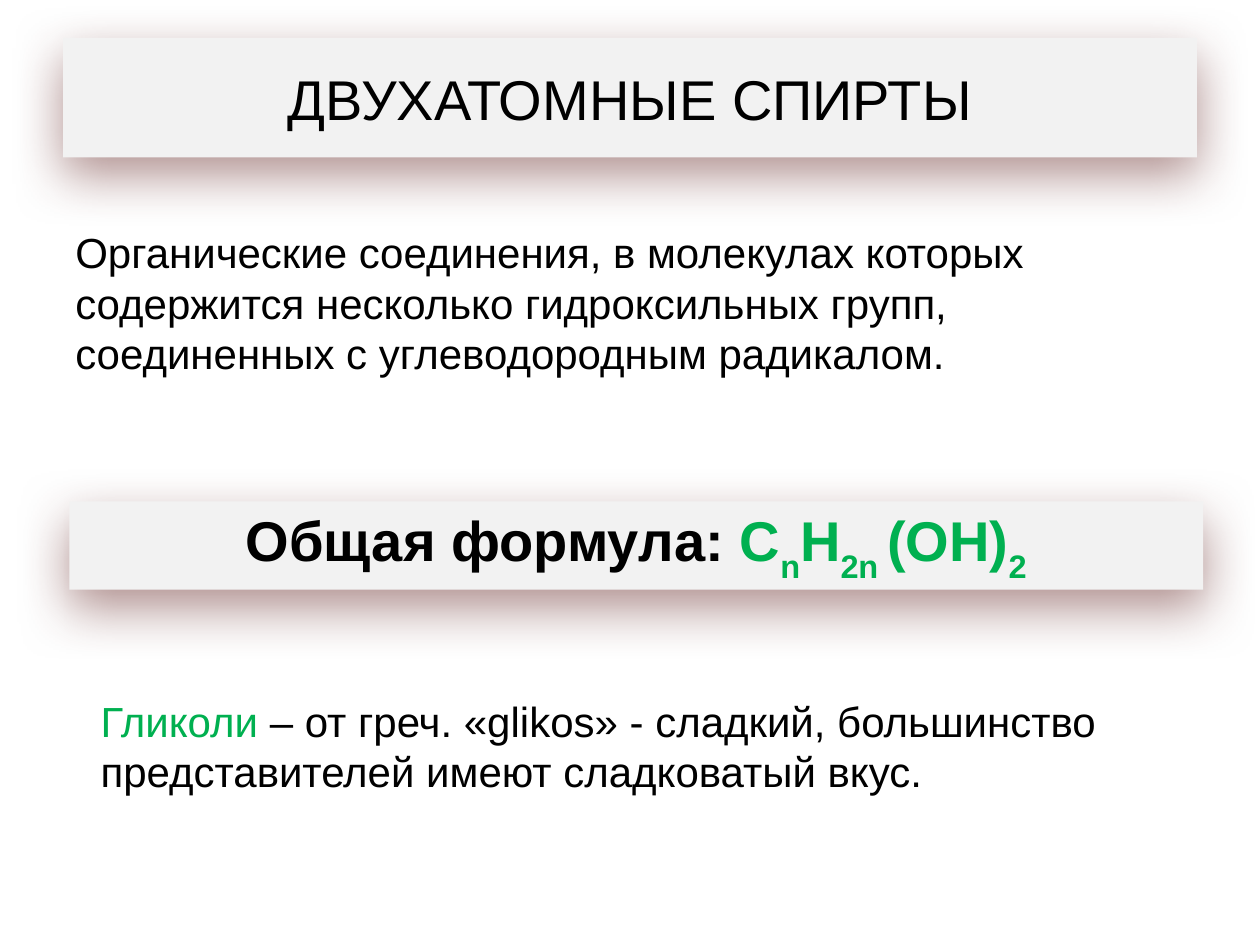
"""Build a slide on dihydric alcohols and their general formula."""
from lxml.etree import SubElement
from pptx import Presentation
from pptx.dml.color import RGBColor
from pptx.enum.shapes import MSO_SHAPE
from pptx.enum.text import MSO_ANCHOR, PP_ALIGN
from pptx.oxml.ns import qn
from pptx.util import Inches, Pt

BLACK = RGBColor(0x00, 0x00, 0x00)
GREEN = RGBColor(0x00, 0xB0, 0x50)
GREY = RGBColor(0xF2, 0xF2, 0xF2)
MAROON = RGBColor(0x63, 0x25, 0x23)
FONT = "Arial"
SUB = -30

TITLE = [("ДВУХАТОМНЫЕ СПИРТЫ", BLACK, 0)]
ABOUT = [("Органические соединения, в молекулах которых содержится несколько "
          "гидроксильных групп, соединенных с углеводородным радикалом.", BLACK, 0)]
FORMULA = [
    ("Общая формула: ", BLACK, 0),
    ("С", GREEN, 0),
    ("n", GREEN, SUB),
    ("Н", GREEN, 0),
    ("2n ", GREEN, SUB),
    ("(OH)", GREEN, 0),
    ("2", GREEN, SUB),
]
GLYCOLS = [
    ("Гликоли ", GREEN, 0),
    ("– от греч. «glikos» - сладкий, большинство представителей имеют "
     "сладковатый вкус.", BLACK, 0),
]
NOTES = [(ABOUT, (0.5, 1.75, 9, 2.31)), (GLYCOLS, (0.7, 5.47, 9, 1.61))]


def write(shape, runs, size=24, bold=False, align=PP_ALIGN.LEFT, anchor=MSO_ANCHOR.TOP):
    frame = shape.text_frame
    frame.word_wrap = True
    frame.vertical_anchor = anchor
    para = frame.paragraphs[0]
    para.alignment = align
    for text, color, base in runs:
        run = para.add_run()
        run.text = text
        font = run.font
        font.name, font.size, font.bold = FONT, Pt(size), bold
        font.color.rgb = color
        if base:
            run._r.get_or_add_rPr().set("baseline", str(base * 1000))


def banner(shape, runs, bold=False):
    shape.fill.solid()
    shape.fill.fore_color.rgb = GREY
    shape.line.fill.background()
    shape.shadow.inherit = False
    glow = SubElement(shape._element.spPr.find(qn("a:effectLst")), qn("a:outerShdw"),
                      blurRad=str(Pt(30)), dist=str(Pt(10)), dir=str(90 * 60000),
                      algn="t", rotWithShape="0")
    tint = SubElement(glow, qn("a:srgbClr"), val=str(MAROON))
    SubElement(tint, qn("a:alpha"), val="50000")
    write(shape, runs, size=32, bold=bold, align=PP_ALIGN.CENTER, anchor=MSO_ANCHOR.MIDDLE)


def main():
    deck = Presentation()
    deck.slide_width, deck.slide_height = Inches(10), Inches(7.5)
    slide = deck.slides.add_slide(deck.slide_layouts[5])
    title = slide.shapes.title
    title.left, title.top, title.width, title.height = map(Inches, (0.5, 0.3, 9, 0.95))
    banner(title, TITLE)
    bar = slide.shapes.add_shape(MSO_SHAPE.RECTANGLE, *map(Inches, (0.55, 3.98, 9, 0.7)))
    banner(bar, FORMULA, bold=True)
    for runs, place in NOTES:
        write(slide.shapes.add_textbox(*map(Inches, place)), runs)
    deck.save("out.pptx")


if __name__ == "__main__":
    main()
